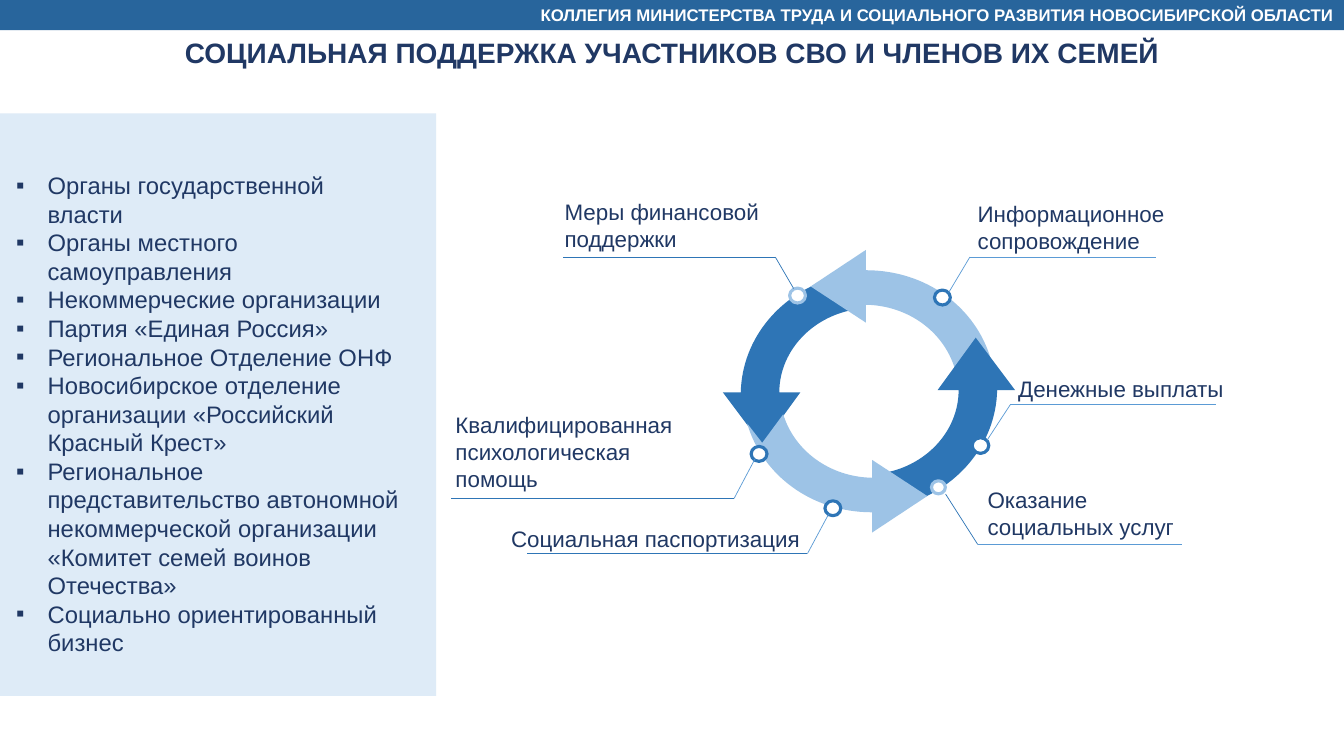
from collections import namedtuple
from dataclasses import dataclass

from lxml.etree import SubElement
from pptx import Presentation
from pptx.dml.color import RGBColor
from pptx.enum.shapes import MSO_CONNECTOR, MSO_SHAPE
from pptx.enum.text import MSO_ANCHOR, PP_ALIGN
from pptx.oxml.ns import qn
from pptx.util import Cm, Pt


@dataclass(frozen=True)
class Theme:
    """Colours, font and type sizes of the slide."""
    font: str = "Arial"
    navy: str = "203864"
    white: str = "FFFFFF"
    bar: str = "28659C"
    panel: str = "DEEBF7"
    dark: str = "2E75B6"
    mid: str = "5B9BD5"
    light: str = "9DC3E6"
    bar_size: float = 12
    title_size: float = 20
    list_size: float = 17
    label_size: float = 16
    hairline: float = 0.5
    dot_line: float = 2.25


T = Theme()
Callout = namedtuple("Callout", "text dot size ring start elbow end label box slant base")
Arrow = namedtuple("Arrow", "outer head inner notch color")

PARTNERS = [
    "Органы государственной власти",
    "Органы местного самоуправления",
    "Некоммерческие организации",
    "Партия «Единая Россия»",
    "Региональное Отделение ОНФ",
    "Новосибирское отделение организации «Российский Красный Крест»",
    "Региональное представительство автономной некоммерческой организации "
    "«Комитет семей воинов Отечества»",
    "Социально ориентированный бизнес",
]

CALLOUTS = [
    Callout("Меры финансовой поддержки", (-1.8, -2.4), 0.4, T.light, (-1.9, -2.59),
            (-2.36, -3.38), -7.72, (-7.92, -5), (8.18, 1.63), T.dark, T.dark),
    Callout("Информационное сопровождение", (1.85, -2.35), 0.4, T.dark, (2.01, -2.49),
            (2.54, -3.38), 7.24, (2.49, -4.93), (9.27, 0.94), T.mid, T.mid),
    Callout("Денежные выплаты", (2.81, 1.38), 0.42, T.dark, (2.97, 1.24),
            (3.56, 0.34), 8.74, (3.51, -0.53), (6.17, 0.94), T.mid, T.mid),
    Callout("Оказание социальных услуг", (1.75, 2.43), 0.35, T.light, (1.93, 2.59),
            (2.74, 3.86), 7.9, (2.74, 2.26), (5.84, 1.63), T.dark, T.mid),
    Callout("Социальная паспортизация", (-0.91, 2.96), 0.4, T.dark, (-1.02, 3.1),
            (-1.55, 4.09), -8.61, (-9.27, 3.25), (7.98, 0.94), T.mid, T.dark),
    Callout("Квалифицированная психологическая помощь", (-2.77, 1.59), 0.4, T.dark,
            (-2.87, 1.7), (-3.4, 2.7), -10.54, (-10.67, 0.38), (6.93, 1.6), T.mid, T.dark),
]

ARROWS = [
    Arrow([(-0.86, -2.87), (-2.21, -2.49), (-3.2, -1.35), (-3.23, 0.03)],
          [(-3.68, 0.03), (-2.69, 1.35), (-1.73, 0.03)],
          [(-2.26, 0.03), (-2.26, -0.97), (-1.5, -1.8), (-0.51, -2.03)],
          (-1.32, -2.57), T.dark),
    Arrow([(3.07, -0.81), (2.69, -2.11), (1.45, -3.05), (-0.08, -3.05)],
          [(-0.08, -3.56), (-1.47, -2.64), (-0.08, -1.73)],
          [(-0.08, -2.18), (0.99, -2.16), (1.88, -1.5), (2.16, -0.58)],
          (2.69, -1.3), T.light),
]


def rgb(value):
    """Return the colour for a hex string."""
    return RGBColor.from_string(value)


def write(sp, *lines, size, color=T.navy, bold=False, align=PP_ALIGN.LEFT,
          anchor=MSO_ANCHOR.TOP, bullet=None):
    """Fill a shape with formatted paragraphs."""
    tf = sp.text_frame
    tf.word_wrap = True
    tf.vertical_anchor = anchor
    for i, line in enumerate(lines):
        p = tf.add_paragraph() if i else tf.paragraphs[0]
        p.alignment = align
        if bullet:
            pPr = p._p.get_or_add_pPr()
            pPr.set("marL", str(Cm(0.79)))
            pPr.set("indent", str(-Cm(0.79)))
            SubElement(pPr, qn("a:buFont"), typeface=T.font)
            SubElement(pPr, qn("a:buChar"), char=bullet)
        r = p.add_run()
        r.text = line
        r.font.name = T.font
        r.font.size = Pt(size)
        r.font.bold = bold
        r.font.color.rgb = rgb(color)


def paint(sp, fill, line=None):
    """Give a shape a flat fill and an optional outline."""
    sp.shadow.inherit = False
    sp.fill.solid()
    sp.fill.fore_color.rgb = rgb(fill)
    if line:
        sp.line.color.rgb = rgb(line)
        sp.line.width = Pt(T.dot_line)
    else:
        sp.line.fill.background()


def add_box(s, kind, x, y, w, h, fill, line=None):
    """Add a painted preset shape."""
    sp = s.shapes.add_shape(kind, Cm(x), Cm(y), Cm(w), Cm(h))
    paint(sp, fill, line)
    return sp


def add_line(s, x1, y1, x2, y2, color):
    """Add a thin straight line."""
    c = s.shapes.add_connector(MSO_CONNECTOR.STRAIGHT, Cm(x1), Cm(y1), Cm(x2), Cm(y2))
    c.line.color.rgb = rgb(color)
    c.line.width = Pt(T.hairline)
    SubElement(c._element.spPr, qn("a:effectLst"))


def header(s, x, y, w):
    """Place the top bar and the title below it."""
    bar = add_box(s, MSO_SHAPE.RECTANGLE, x, y, w, 0.76, T.bar)
    write(bar, "КОЛЛЕГИЯ МИНИСТЕРСТВА ТРУДА И СОЦИАЛЬНОГО РАЗВИТИЯ НОВОСИБИРСКОЙ ОБЛАСТИ",
          size=T.bar_size, color=T.white, bold=True, align=PP_ALIGN.RIGHT,
          anchor=MSO_ANCHOR.MIDDLE)
    title = s.shapes.title
    title.left, title.top, title.width, title.height = Cm(x), Cm(y + 0.76), Cm(w), Cm(1.12)
    write(title, "СОЦИАЛЬНАЯ ПОДДЕРЖКА УЧАСТНИКОВ СВО И ЧЛЕНОВ ИХ СЕМЕЙ",
          size=T.title_size, bold=True, align=PP_ALIGN.CENTER, anchor=MSO_ANCHOR.MIDDLE)


def partner_panel(s, x, y, w, h):
    """Place the tinted panel with the list of partners."""
    add_box(s, MSO_SHAPE.RECTANGLE, x, y, w, h, T.panel)
    tb = s.shapes.add_textbox(Cm(x + 0.16), Cm(y + 1.32), Cm(w - 0.78), Cm(h - 2.08))
    write(tb, *PARTNERS, size=T.list_size, bullet="▪")


def bend(segments):
    """Turn three straight segments into one cubic curve."""
    first, *rest = segments
    first.tag = qn("a:cubicBezTo")
    for segment in rest:
        first.append(segment[0])
        segment.getparent().remove(segment)


def ring_arrow(s, cx, cy, arrow, turn):
    """Draw one curved arrow; turn is -1 for a half turn about the centre."""
    outline = arrow.outer + arrow.head + arrow.inner + [arrow.notch]
    pts = [(Cm(cx + turn * x), Cm(cy + turn * y)) for x, y in outline]
    fb = s.shapes.build_freeform(*pts[0])
    fb.add_line_segments(pts[1:], close=True)
    sp = fb.convert_to_shape()
    segments = list(sp._element.iter(qn("a:lnTo")))
    bend(segments[:3])
    bend(segments[7:10])
    paint(sp, arrow.color)


def callout(s, cx, cy, c):
    """Place a dot, its bent leader line and its label."""
    add_box(s, MSO_SHAPE.OVAL, cx + c.dot[0] - c.size / 2, cy + c.dot[1] - c.size / 2,
            c.size, c.size * 0.94, T.white, c.ring)
    ex, ey = cx + c.elbow[0], cy + c.elbow[1]
    add_line(s, cx + c.start[0], cy + c.start[1], ex, ey, c.slant)
    add_line(s, ex, ey, cx + c.end, ey, c.base)
    w, h = c.box
    tb = s.shapes.add_textbox(Cm(cx + c.label[0]), Cm(cy + c.label[1]), Cm(w), Cm(h))
    write(tb, c.text, size=T.label_size)


def support_cycle(s, cx, cy):
    """Place the ring of four arrows and its callouts around a centre."""
    for turn in (1, -1):
        for arrow in ARROWS:
            ring_arrow(s, cx, cy, arrow, turn)
    for c in CALLOUTS:
        callout(s, cx, cy, c)


def main():
    """Build and save the slide."""
    prs = Presentation()
    prs.slide_width, prs.slide_height = Cm(33.87), Cm(19.05)
    s = prs.slides.add_slide(prs.slide_layouts[5])
    header(s, 0, 0, 33.87)
    partner_panel(s, 0, 2.86, 10.99, 14.68)
    support_cycle(s, 21.9, 9.86)
    prs.save("out.pptx")


if __name__ == "__main__":
    main()
